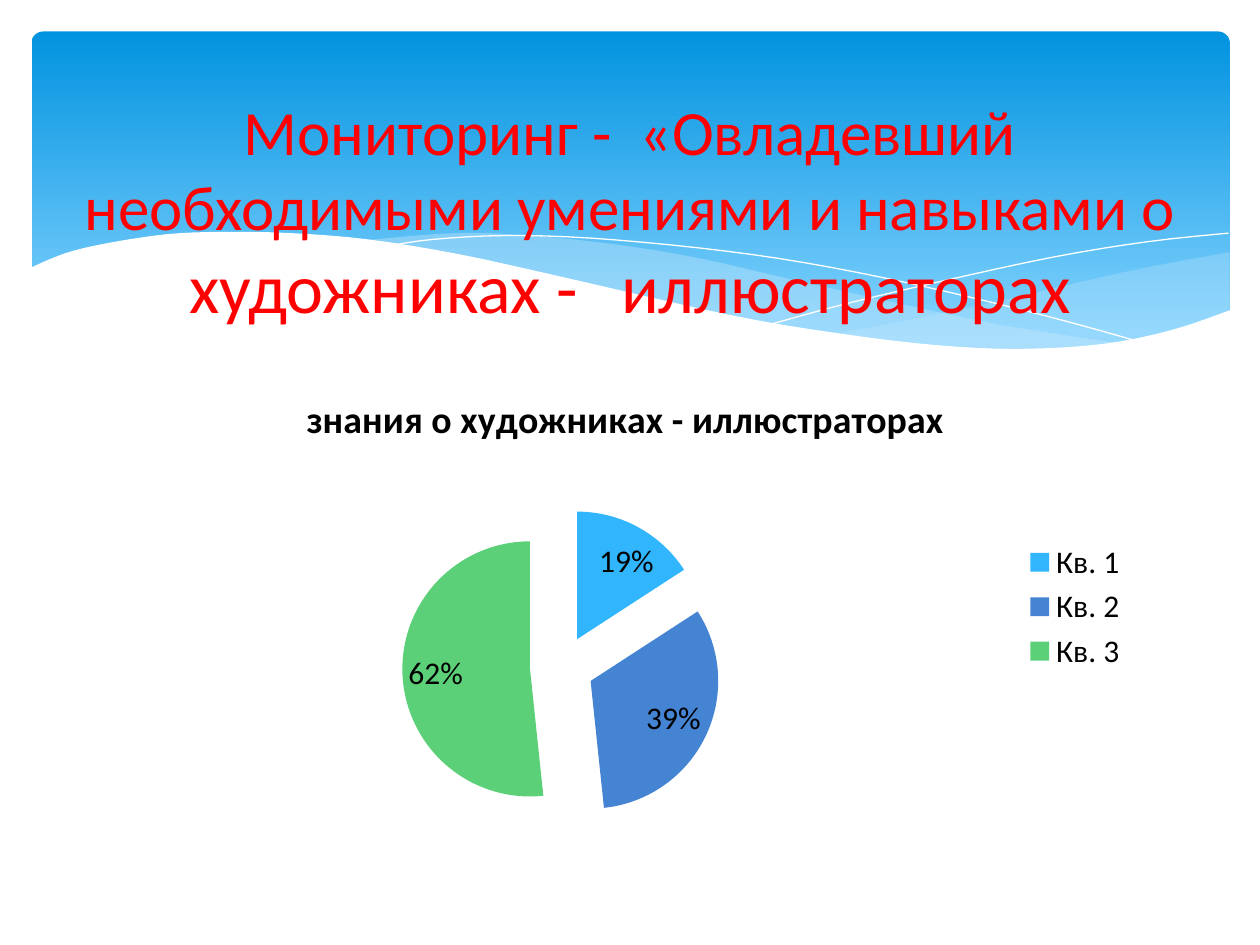
from dataclasses import dataclass
from typing import Optional

from lxml import etree
from pptx import Presentation
from pptx import util as u
from pptx.chart import data as cd
from pptx.dml.color import RGBColor
from pptx.enum import chart as ec, shapes as es, text as et
from pptx.oxml.ns import qn

HUES = {
    "top": "0293E0", "low": "83D3FE", "mist": "C6E7FC", "white": "FFFFFF",
    "red": "FF0000", "black": "000000",
    "sky": "31B6FD", "blue": "4584D3", "green": "5BD078",
}
FONT = "Calibri"
Curve = list[tuple[float, float]]


@dataclass
class Wave:
    curves: list[Curve]
    fill: Optional[str] = None
    alpha: int = 100
    line: Optional[str] = None


@dataclass
class Run:
    words: str
    size: int
    hue: str


WAVES = [
    # right-hand swell
    Wave([[(702.7, 144), (652.3, 153.4), (619.9, 160.6), (560.9, 174.2),
           (508.3, 185), (475.9, 190.8)],
          [(475.9, 190.8), (517.7, 195.8), (553.7, 199.4), (586, 200.2),
           (621.4, 198), (651.6, 193.7), (678.2, 186.5), (702.7, 177.8)]],
         fill="mist", alpha=29),
    # long middle swell
    Wave([[(643, 196.6), (581, 187.2), (533.5, 177.8), (452.9, 159.8),
           (399.6, 147.6), (352.1, 139.7), (302.4, 134.6), (259.9, 133.2),
           (205.9, 137.5)],
          [(205.9, 137.5), (260.6, 146.2), (323.3, 159.8), (407.5, 178.6),
           (468, 190.1), (519.8, 197.3), (565.2, 200.2), (603.4, 200.2),
           (643, 196.6)]],
         fill="mist", alpha=40),
    # two thin crests
    Wave([[(222.5, 140.4), (247.7, 136.8), (288.7, 134.6), (337.7, 136.1),
           (400.3, 141.8), (457.9, 149.8), (523.4, 162.7), (598.3, 180.7),
           (653, 195.8)]], line="white"),
    Wave([[(441.4, 185), (483.8, 173.5), (538.6, 160.6), (601.9, 146.9),
           (655.2, 138.2), (702, 133.2)]], line="white"),
    # white front wave
    Wave([[(703.4, 177.1), (669.6, 188.6), (630, 196.6), (582.5, 199.4),
           (535.7, 197.3), (481, 190.8), (416.9, 180), (321.8, 158.4),
           (262.8, 145.4), (210.2, 136.8), (165.6, 133.2), (127.4, 132.5),
           (95, 133.9), (61.2, 139), (37.4, 144.7), (16.6, 153.4)],
          [(16.6, 236.9), (703.4, 236.9)]],
         fill="white"),
]

TITLE = [
    Run("Мониторинг -  «Овладевший необходимыми умениями и навыками о ", 36, "red"),
    Run("художниках -", 40, "red"),
    Run("--", 40, "white"),
    Run("иллюстраторах", 40, "red"),
]
TOPIC = "знания о художниках - иллюстраторах "
PARTS = [("Кв. 1", 0.19, "sky"), ("Кв. 2", 0.39, "blue"), ("Кв. 3", 0.62, "green")]


def rgb(name: str) -> RGBColor:
    return RGBColor.from_string(HUES[name])


def style(font, size: float, hue: str, bold: bool = False) -> None:
    font.name, font.size, font.bold = FONT, u.Pt(size), bold
    font.color.rgb = rgb(hue)


def smooth(curve: Curve, steps: int = 4) -> Curve:
    """Catmull-Rom spline through the points of a curve."""
    pads = [curve[0], *curve, curve[-1]]
    out = [curve[0]]
    for a, b, c, d in zip(pads, pads[1:], pads[2:], pads[3:]):
        for i in range(1, steps + 1):
            t = i / steps
            out.append(tuple(
                (2 * q + (r - p) * t + (2 * p - 5 * q + 4 * r - s) * t ** 2
                 + (3 * q - p - 3 * r + s) * t ** 3) / 2
                for p, q, r, s in zip(a, b, c, d)))
    return out


def add_wave(slide, wave: Wave) -> None:
    dots = [(u.Pt(x), u.Pt(y)) for curve in wave.curves for x, y in smooth(curve)]
    pen = slide.shapes.build_freeform(*dots[0])
    pen.add_line_segments(dots[1:], close=wave.fill is not None)
    shape = pen.convert_to_shape()
    shape.shadow.inherit = False
    if wave.fill:
        shape.fill.solid()
        shape.fill.fore_color.rgb = rgb(wave.fill)
        if wave.alpha < 100:
            tint = shape._element.spPr.find(".//" + qn("a:srgbClr"))
            etree.SubElement(tint, qn("a:alpha"), val=str(wave.alpha * 1000))
    else:
        shape.fill.background()
    if wave.line:
        shape.line.color.rgb = rgb(wave.line)
        shape.line.width = u.Pt(0)
    else:
        shape.line.fill.background()


def add_sky(slide) -> None:
    sky = slide.shapes.add_shape(es.MSO_SHAPE.ROUNDED_RECTANGLE,
                                 u.Pt(18), u.Pt(18), u.Pt(684.7), u.Pt(194.4))
    sky.adjustments[0] = 0.034
    sky.shadow.inherit = False
    sky.line.fill.background()
    sky.fill.gradient()
    sky.fill.gradient_angle = 270
    for stop, spot, hue in zip(sky.fill.gradient_stops, (0, 0.9), ("top", "low")):
        stop.position = spot
        stop.color.rgb = rgb(hue)


def add_pie(slide) -> None:
    data = cd.CategoryChartData(number_format="0%")
    data.categories = [name for name, _, _ in PARTS]
    data.add_series(TOPIC, [share for _, share, _ in PARTS])
    chart = slide.shapes.add_chart(ec.XL_CHART_TYPE.PIE, u.Pt(68.4), u.Pt(211),
                                   u.Pt(583.2), u.Pt(271.4), data).chart
    style(chart.font, 18, "black")
    chart.has_title = True
    run = chart.chart_title.text_frame.paragraphs[0].add_run()
    run.text = TOPIC
    style(run.font, 21.6, "black", bold=True)
    chart.chart_title.include_in_layout = False
    chart.has_legend = True
    chart.legend.position = ec.XL_LEGEND_POSITION.RIGHT
    chart.legend.include_in_layout = False

    # exploded slices with their values
    plot = chart.plots[0]
    plot.vary_by_categories = True
    series = plot.series[0]
    burst = etree.Element(qn("c:explosion"), val="25")
    series._element.find(qn("c:tx")).addnext(burst)
    for i, (_, _, hue) in enumerate(PARTS):
        fill = series.points[i].format.fill
        fill.solid()
        fill.fore_color.rgb = rgb(hue)
    plot.has_data_labels = True
    tags = plot.data_labels
    tags.show_value, tags.show_percentage = True, False
    tags.number_format, tags.number_format_is_linked = "0%", False
    style(tags.font, 18, "black")


def add_title(slide) -> None:
    frame = slide.shapes.add_textbox(u.Pt(36), u.Pt(26.6),
                                     u.Pt(648), u.Pt(186.5)).text_frame
    frame.word_wrap = True
    frame.vertical_anchor = et.MSO_ANCHOR.MIDDLE
    para = frame.paragraphs[0]
    para.alignment = et.PP_ALIGN.CENTER
    for item in TITLE:
        run = para.add_run()
        run.text = item.words
        style(run.font, item.size, item.hue)


def main() -> None:
    deck = Presentation()
    deck.slide_width, deck.slide_height = u.Pt(720), u.Pt(540)
    slide = deck.slides.add_slide(deck.slide_layouts[6])
    add_sky(slide)
    for wave in WAVES:
        add_wave(slide, wave)
    add_pie(slide)
    add_title(slide)
    deck.save("out.pptx")


if __name__ == "__main__":
    main()
